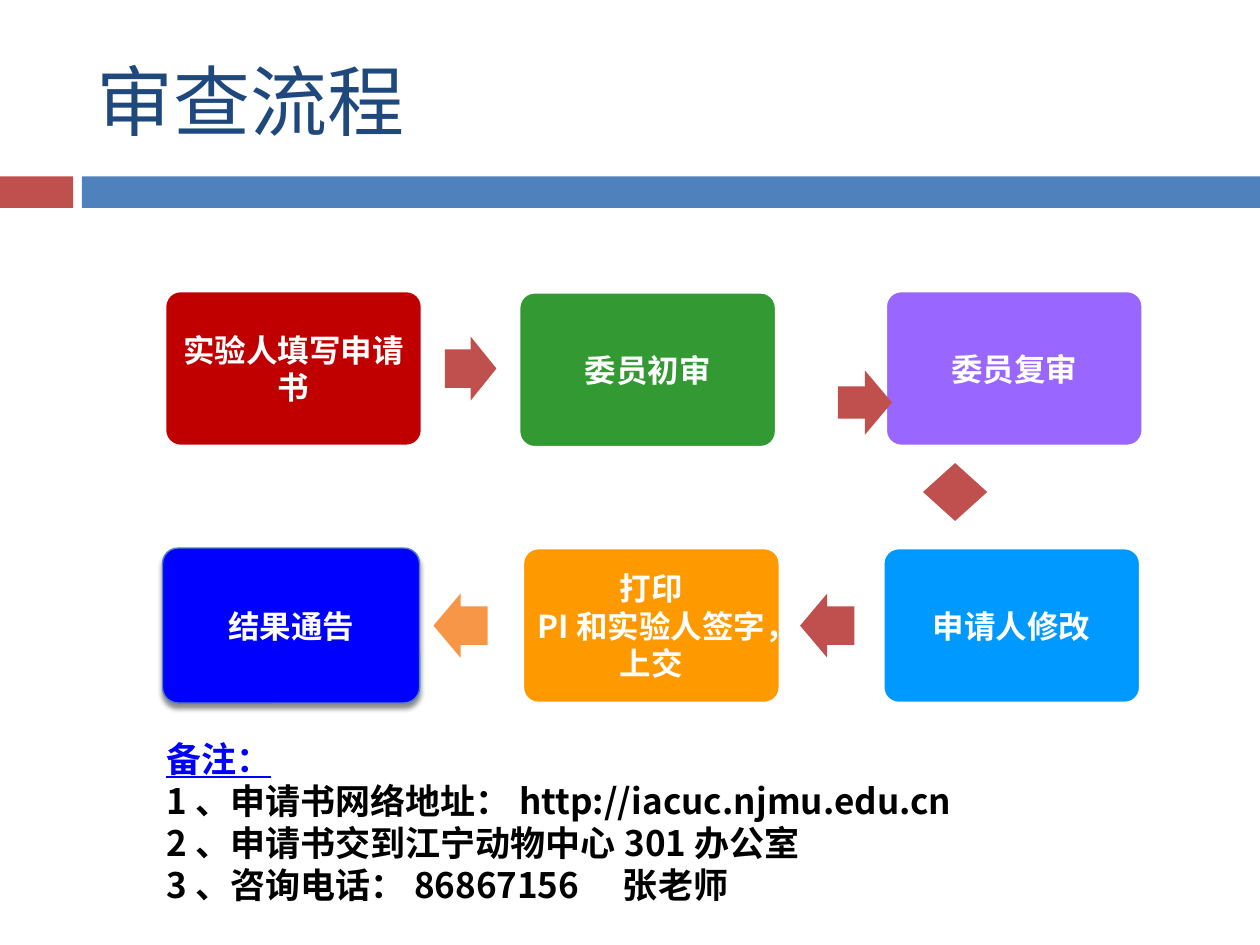
from lxml import etree
from pptx import Presentation
from pptx.dml.color import RGBColor
from pptx.enum.shapes import MSO_SHAPE
from pptx.enum.text import MSO_ANCHOR, PP_ALIGN
from pptx.oxml import parse_xml
from pptx.oxml.ns import qn
from pptx.util import Inches, Pt

RECT, ROUND = MSO_SHAPE.RECTANGLE, MSO_SHAPE.ROUNDED_RECTANGLE
RIGHT, BOTH = MSO_SHAPE.RIGHT_ARROW, MSO_SHAPE.LEFT_RIGHT_ARROW
MIDDLE, CENTER, LEFT = MSO_ANCHOR.MIDDLE, PP_ALIGN.CENTER, PP_ALIGN.LEFT

FONT = "Noto Sans CJK SC"
WHITE = RGBColor(0xFF, 0xFF, 0xFF)
BLACK = RGBColor(0x00, 0x00, 0x00)
NAVY = RGBColor(0x1F, 0x49, 0x7D)
STEEL = RGBColor(0x4F, 0x81, 0xBD)
BRICK = RGBColor(0xC0, 0x50, 0x4D)
PEACH = RGBColor(0xF7, 0x96, 0x46)
RED = RGBColor(0xC0, 0x00, 0x00)
GREEN = RGBColor(0x33, 0x99, 0x33)
PURPLE = RGBColor(0x99, 0x66, 0xFF)
SKY = RGBColor(0x00, 0x99, 0xFF)
ORANGE = RGBColor(0xFF, 0x99, 0x00)
BLUE = RGBColor(0x00, 0x00, 0xFF)

SHADOW = (
    '<a:outerShdw xmlns:a="http://schemas.openxmlformats.org/drawingml/2006/main"'
    ' blurRad="38100" dist="30480" dir="5400000" rotWithShape="0">'
    '<a:srgbClr val="000000"><a:alpha val="45000"/></a:srgbClr></a:outerShdw>'
)


def add_block(kind, left, top, width, height, fill):
    block = slide.shapes.add_shape(
        kind, Inches(left), Inches(top), Inches(width), Inches(height))
    block.shadow.inherit = False
    block.fill.solid()
    block.fill.fore_color.rgb = fill
    block.line.fill.background()
    return block


def write(frame, lines, size, color, bold=True, align=LEFT):
    """Fill a text frame, one paragraph a line, in Latin and East Asian font."""
    frame.word_wrap = True
    for i, line in enumerate(lines):
        para = frame.paragraphs[0] if i == 0 else frame.add_paragraph()
        para.text = line
        para.alignment = align
        para.line_spacing = Pt(size * 1.2)
        font = para.font
        font.name, font.size, font.bold = FONT, Pt(size), bold
        font.color.rgb = color
        props = para._p.pPr.find(qn("a:defRPr"))
        etree.SubElement(props, qn("a:ea")).set("typeface", FONT)


deck = Presentation()
deck.slide_width, deck.slide_height = Inches(10), Inches(7.5)
slide = deck.slides.add_slide(deck.slide_layouts[6])

# Title and band
add_block(RECT, 0, 1.4, 0.58, 0.25, BRICK)
add_block(RECT, 0.65, 1.4, 9.35, 0.25, STEEL)
title = slide.shapes.add_textbox(
    Inches(0.67), Inches(0.25), Inches(8.92), Inches(1.08)).text_frame
title.vertical_anchor = MIDDLE
write(title, ["审查流程"], 44, NAVY, bold=False)

# Steps of the review
steps = [
    (1.31, 2.31, RED, ["实验人填写申请书"]),
    (4.12, 2.32, GREEN, ["委员初审"]),
    (7.03, 2.31, PURPLE, ["委员复审"]),
    (7.01, 4.35, SKY, ["申请人修改"]),
    (4.15, 4.35, ORANGE, ["打印", "PI和实验人签字，上交"]),
    (1.29, 4.35, BLUE, ["结果通告"]),
]
for left, top, fill, lines in steps:
    box = add_block(ROUND, left, top, 2.04, 1.23, fill)
    box.adjustments[0] = 0.1
    box.line.color.rgb = WHITE
    box.line.width = Pt(1.5)
    frame = box.text_frame
    frame.vertical_anchor = MIDDLE
    frame.margin_left = frame.margin_right = Inches(0.07)
    frame.margin_top = frame.margin_bottom = Inches(0.07)
    write(frame, lines, 18, WHITE, align=CENTER)

# The last step stands out
box.line.color.rgb = STEEL
box.line.width = Pt(0.79)
box._element.spPr.find(qn("a:effectLst")).append(parse_xml(SHADOW))

# Arrows between the steps
arrows = [
    (RIGHT, 3.53, 2.67, 0.41, 0, 0.6, BRICK),
    (RIGHT, 6.65, 2.94, 0.43, 0, 0.5, BRICK),
    (BOTH, 7.35, 3.65, 0.46, 90, 0.5, BRICK),
    (RIGHT, 6.35, 4.71, 0.43, 180, 0.6, BRICK),
    (RIGHT, 3.44, 4.71, 0.43, 180, 0.6, PEACH),
]
for kind, left, top, width, turn, shaft, fill in arrows:
    arrow = add_block(kind, left, top, width, 0.51, fill)
    arrow.rotation = turn
    arrow.adjustments[0] = shaft

# Notes
notes = slide.shapes.add_textbox(
    Inches(1.22), Inches(5.8), Inches(8.11), Inches(1.45)).text_frame
write(notes, [
    "备注：",
    "1、申请书网络地址：http://iacuc.njmu.edu.cn",
    "2、申请书交到江宁动物中心301办公室",
    "3、咨询电话：86867156　张老师",
], 20, BLACK)
head = notes.paragraphs[0].font
head.color.rgb = BLUE
head.underline = True

deck.save("out.pptx")
